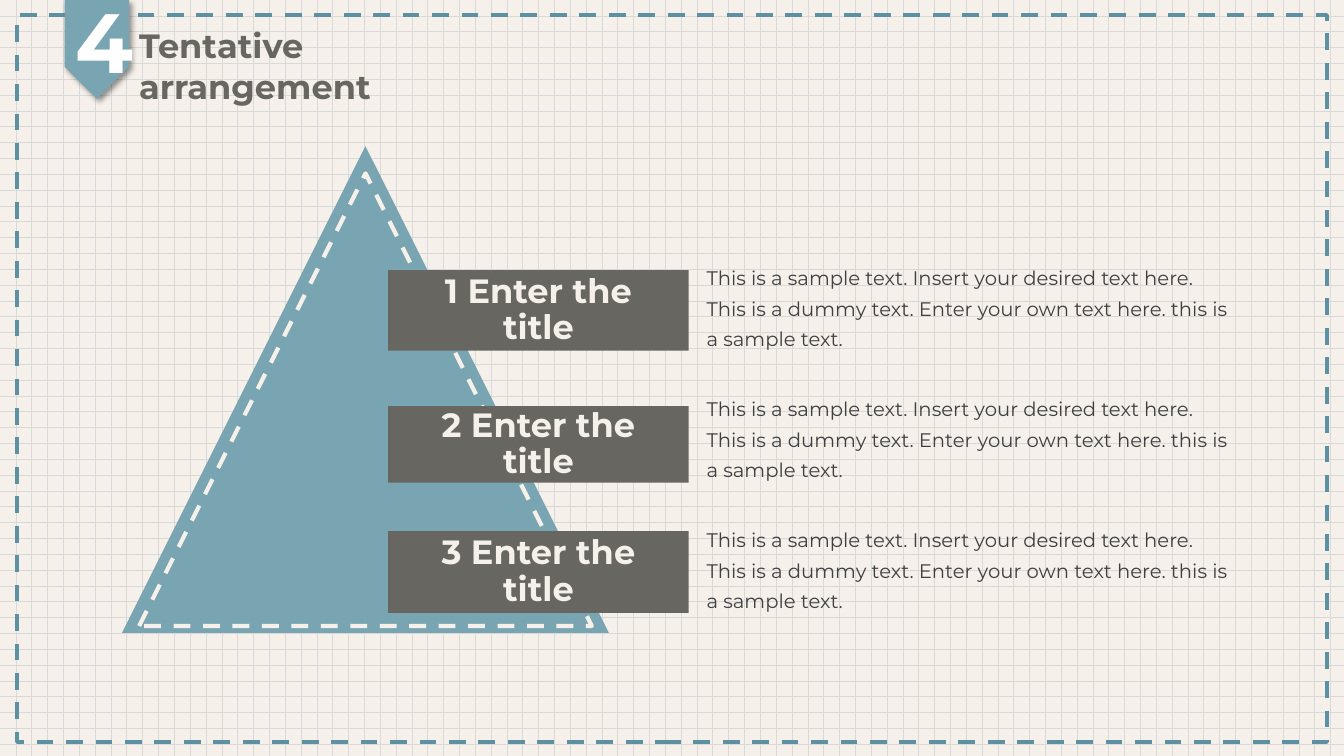
from dataclasses import dataclass

from lxml import etree
from pptx import Presentation
from pptx.dml.color import RGBColor
from pptx.enum.dml import MSO_LINE, MSO_PATTERN
from pptx.enum.shapes import MSO_SHAPE as Shape
from pptx.enum.text import MSO_ANCHOR as Anchor, MSO_AUTO_SIZE as AutoSize, PP_ALIGN as Align
from pptx.oxml.ns import qn
from pptx.util import Inches, Pt


@dataclass(frozen=True)
class Theme:
    font: str = "Montserrat"
    paper: str = "F5F0EA"
    grid: str = "D9D9D9"
    frame: str = "5D91A1"
    teal: str = "79A5B2"
    stone: str = "676661"
    white: str = "FFFFFF"
    body: str = "404040"
    shadow: str = "000000"
    number_size: int = 60
    title_size: int = 24
    body_size: int = 14
    dash_width: int = 3


THEME = Theme()
SAMPLE = ("This is a sample text. Insert your desired text here. "
          "This is a dummy text. Enter your own text here. this is a sample text.")
# heading, top, height
LABELS = [
    ("1 Enter the title", 2.68, 0.8),
    ("2 Enter the title", 4.03, 0.76),
    ("3 Enter the title", 5.27, 0.81),
]
TEXT_TOP, TEXT_STEP = 2.52, 1.3


def rgb(value):
    return RGBColor.from_string(value)


def box(left, top, width, height):
    return [Inches(n) for n in (left, top, width, height)]


def set_background(slide):
    fill = slide.background.fill
    fill.patterned()
    fill.pattern = MSO_PATTERN.DOTTED_GRID
    fill.fore_color.rgb = rgb(THEME.grid)
    fill.back_color.rgb = rgb(THEME.paper)


def add_filled(shapes, kind, place, color):
    sp = shapes.add_shape(kind, *box(*place))
    sp.shadow.inherit = False
    sp.fill.solid()
    sp.fill.fore_color.rgb = rgb(color)
    sp.line.fill.background()
    return sp


def add_dashed(shapes, kind, place, color):
    sp = shapes.add_shape(kind, *box(*place))
    sp.shadow.inherit = False
    sp.fill.background()
    sp.line.color.rgb = rgb(color)
    sp.line.width = Pt(THEME.dash_width)
    sp.line.dash_style = MSO_LINE.DASH
    return sp


def add_drop_shadow(sp):
    """Cast a soft shadow to the lower right."""
    effects = sp._element.spPr.find(qn("a:effectLst"))
    outer = etree.SubElement(effects, qn("a:outerShdw"), blurRad=str(Pt(4)),
                             dist=str(Pt(3)), dir=str(45 * 60000), rotWithShape="0")
    color = etree.SubElement(outer, qn("a:srgbClr"), val=THEME.shadow)
    etree.SubElement(color, qn("a:alpha"), val="40000")


def write(sp, text, size, color, bold=True, align=Align.LEFT, anchor=Anchor.TOP, spacing=None):
    tf = sp.text_frame
    tf.word_wrap = True
    tf.auto_size = AutoSize.NONE
    tf.vertical_anchor = anchor
    p = tf.paragraphs[0]
    p.alignment = align
    p.line_spacing = spacing
    r = p.add_run()
    r.text = text
    r.font.name = THEME.font
    r.font.size = Pt(size)
    r.font.bold = bold
    r.font.color.rgb = rgb(color)


def add_text(shapes, place, *args, **kwargs):
    write(shapes.add_textbox(*box(*place)), *args, **kwargs)


def add_label(shapes, text, top, height):
    sp = add_filled(shapes, Shape.RECTANGLE, (3.85, top, 2.98, height), THEME.stone)
    tf = sp.text_frame
    tf.margin_left = tf.margin_right = tf.margin_top = tf.margin_bottom = Inches(0.19)
    write(sp, text, THEME.title_size, THEME.paper, align=Align.CENTER,
          anchor=Anchor.MIDDLE, spacing=0.9)


def add_header(slide):
    title = slide.shapes.title
    title.left, title.top, title.width, title.height = box(1.28, 0.2, 4.04, 0.5)
    write(title, "Tentative arrangement", THEME.title_size, THEME.stone)

    badge = add_filled(slide.shapes, Shape.PENTAGON, (0.47, 0.17, 0.98, 0.64), THEME.teal)
    badge.rotation = 90
    add_drop_shadow(badge)
    add_text(slide.shapes, (0.65, -0.15, 0.63, 1.11), "4", THEME.number_size, THEME.white)


def add_pyramid(slide):
    shapes = slide.shapes.add_group_shape().shapes
    triangle = Shape.ISOSCELES_TRIANGLE
    add_filled(shapes, triangle, (1.21, 1.45, 4.83, 4.83), THEME.teal)
    add_dashed(shapes, triangle, (1.38, 1.72, 4.49, 4.49), THEME.paper)
    for label in LABELS:
        add_label(shapes, *label)


def main():
    prs = Presentation()
    prs.slide_width, prs.slide_height = Inches(13.33), Inches(7.5)
    slide = prs.slides.add_slide(prs.slide_layouts.get_by_name("Title Only"))
    set_background(slide)
    add_dashed(slide.shapes, Shape.RECTANGLE, (0.17, 0.15, 12.99, 7.21), THEME.frame)
    add_header(slide)
    add_pyramid(slide)
    for i in range(len(LABELS)):
        add_text(slide.shapes, (6.91, TEXT_TOP + i * TEXT_STEP, 5.37, 1.02), SAMPLE,
                 THEME.body_size, THEME.body, bold=False, spacing=1.3)
    prs.save("out.pptx")


if __name__ == "__main__":
    main()
